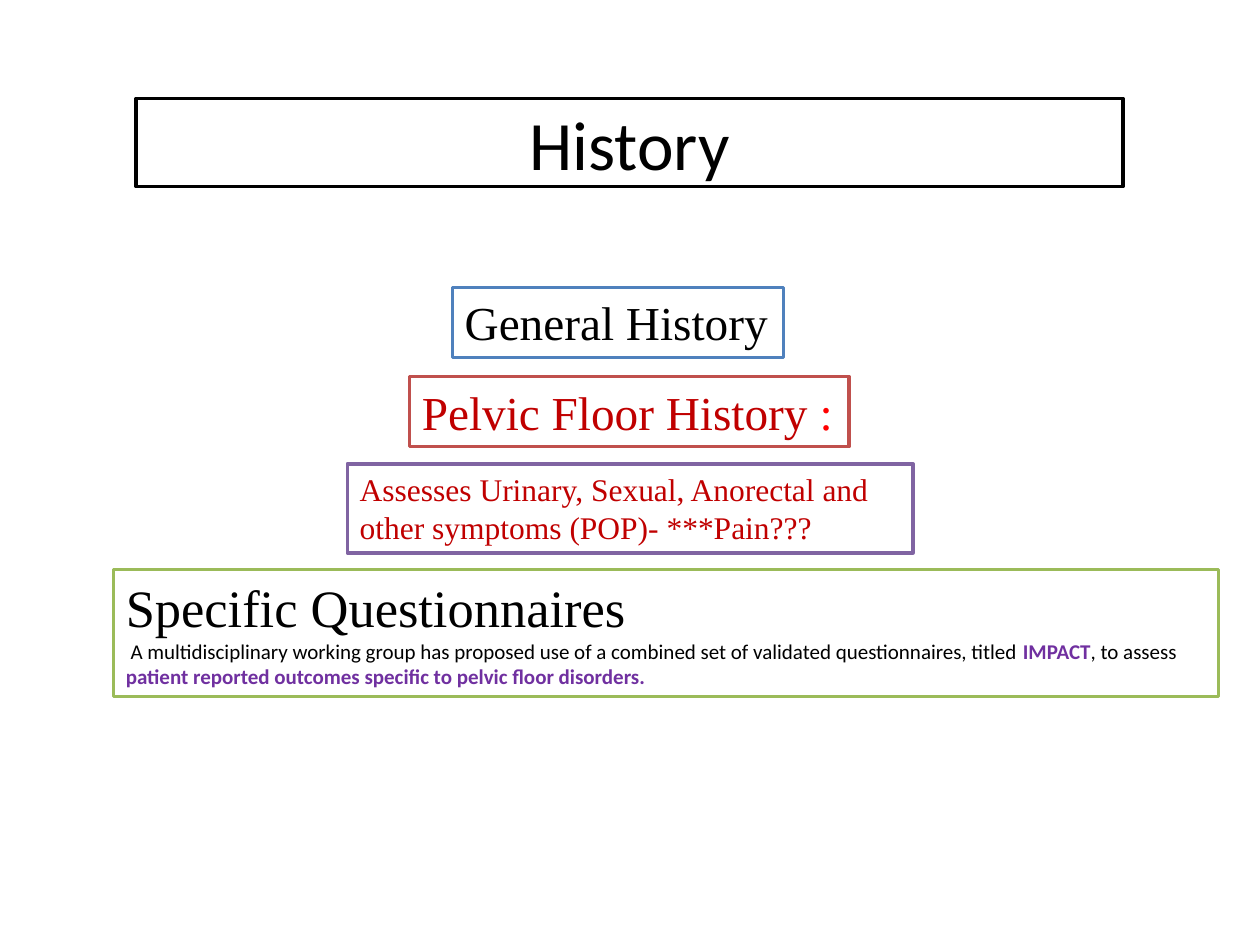
from pptx import Presentation
from pptx.dml.color import RGBColor
from pptx.enum.text import MSO_ANCHOR, MSO_AUTO_SIZE, PP_ALIGN
from pptx.util import Pt

BLACK = RGBColor(0x00, 0x00, 0x00)
WHITE = RGBColor(0xFF, 0xFF, 0xFF)
BLUE = RGBColor(0x4F, 0x81, 0xBD)
BRICK = RGBColor(0xC0, 0x50, 0x4D)
VIOLET = RGBColor(0x80, 0x64, 0xA2)
GREEN = RGBColor(0x9B, 0xBB, 0x59)
DARK_RED = RGBColor(0xC0, 0x00, 0x00)
RED = RGBColor(0xFF, 0x00, 0x00)
PURPLE = RGBColor(0x70, 0x30, 0xA0)

SANS = "Calibri"
SERIF = "Times New Roman"
MIDDLE = MSO_ANCHOR.MIDDLE
TOP = MSO_ANCHOR.TOP
CENTER = PP_ALIGN.CENTER
FIXED = MSO_AUTO_SIZE.NONE
GROW = MSO_AUTO_SIZE.SHAPE_TO_FIT_TEXT


def frame(shape, color):
    """Give a shape a white fill and a coloured border."""
    shape.fill.solid()
    shape.fill.fore_color.rgb = WHITE
    shape.line.color.rgb = color
    shape.line.width = Pt(2)


def write(para, font, size, parts):
    """Add runs given as (text, colour, bold)."""
    for text, color, bold in parts:
        run = para.add_run()
        run.text = text
        run.font.name = font
        run.font.size = Pt(size)
        run.font.bold = bold
        run.font.color.rgb = color


def put_title(slide, box, text):
    title = slide.shapes.title
    title.left, title.top, title.width, title.height = map(Pt, box)
    frame(title, BLACK)
    body = title.text_frame
    body.auto_size = FIXED
    body.word_wrap = True
    body.vertical_anchor = MIDDLE
    body.margin_left = body.margin_right = Pt(7.2)
    body.margin_top = body.margin_bottom = Pt(7.2)
    para = body.paragraphs[0]
    para.alignment = CENTER
    write(para, SANS, 39.6, [(text, BLACK, False)])


def put_box(slide, box, color, wrap, lines):
    """Place a bordered box; each line is (font, size, parts)."""
    shape = slide.shapes.add_textbox(*map(Pt, box))
    frame(shape, color)
    body = shape.text_frame
    body.word_wrap = wrap
    body.auto_size = GROW
    body.vertical_anchor = TOP
    for i, line in enumerate(lines):
        para = body.add_paragraph() if i else body.paragraphs[0]
        write(para, *line)


BOXES = [
    ((258.5, 164.2, 189.4, 40), BLUE, False, [
        (SERIF, 27, [("General History", BLACK, False)]),
    ]),
    ((234, 215.2, 251.3, 40), BRICK, False, [
        (SERIF, 27, [("Pelvic Floor History ", DARK_RED, False),
                     (":", RED, False)]),
    ]),
    ((198.5, 265, 323.2, 51), VIOLET, True, [
        (SERIF, 18, [("Assesses Urinary, Sexual, Anorectal and other "
                      "symptoms (POP)- ***Pain???", DARK_RED, False)]),
    ]),
    ((64.8, 325.3, 631.6, 72.7), GREEN, True, [
        (SERIF, 30, [("Specific Questionnaires", BLACK, False)]),
        (SANS, 12, [
            (" A multidisciplinary working group has proposed use of a "
             "combined set of validated questionnaires, titled ",
             BLACK, False),
            ("IMPACT", PURPLE, True),
            (", to assess ", BLACK, False),
            ("patient reported outcomes specific to pelvic floor "
             "disorders.", PURPLE, True),
        ]),
    ]),
]


def main():
    deck = Presentation()
    deck.slide_width, deck.slide_height = Pt(720), Pt(540)
    slide = deck.slides.add_slide(deck.slide_layouts[5])
    put_title(slide, (77.8, 56.2, 563.8, 50.4), "History")
    for item in BOXES:
        put_box(slide, *item)
    deck.save("out.pptx")


if __name__ == "__main__":
    main()
